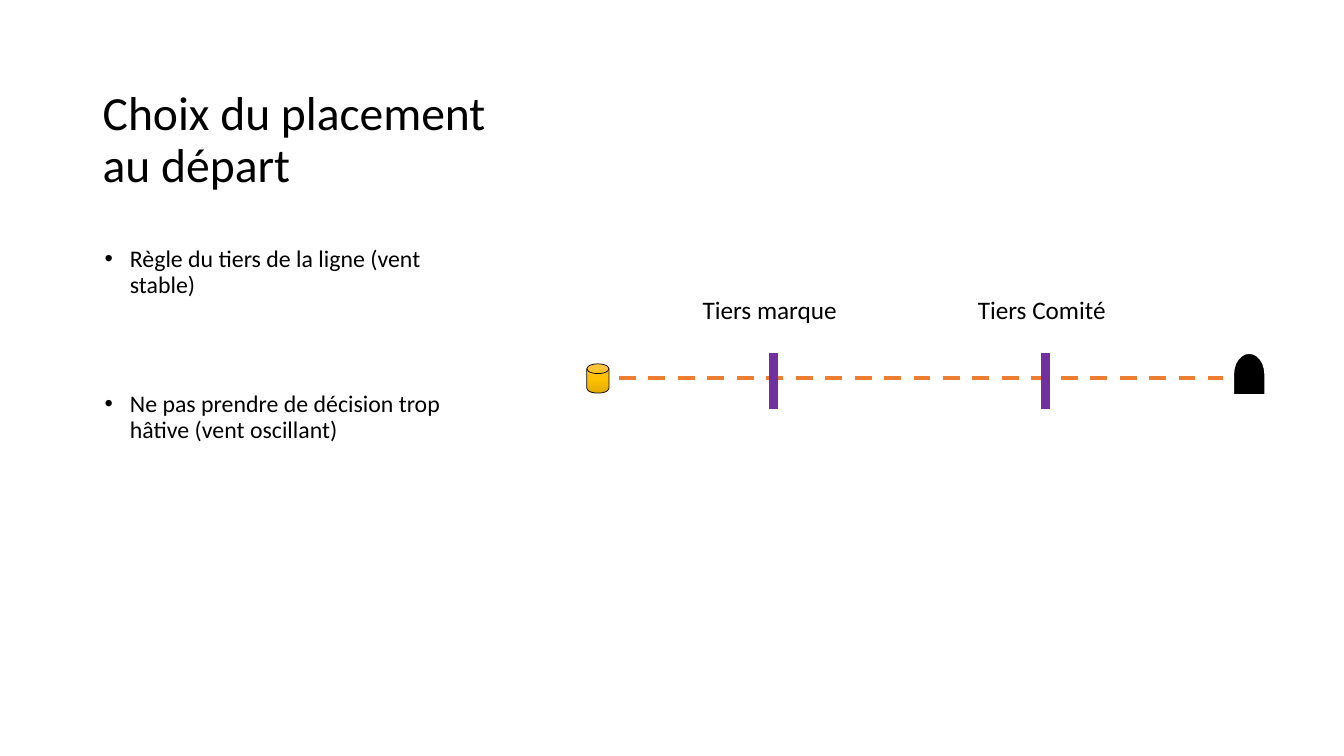
import copy

import pptx
import pptx.dml.color
import pptx.enum.dml
import pptx.enum.shapes
import pptx.enum.text
import pptx.oxml
import pptx.oxml.ns
import pptx.util
from pptx.util import Inches

RGBColor = pptx.dml.color.RGBColor
BLACK = RGBColor(0x00, 0x00, 0x00)
WHITE = RGBColor(0xFF, 0xFF, 0xFF)
ORANGE = RGBColor(0xED, 0x7D, 0x31)
PURPLE = RGBColor(0x70, 0x30, 0xA0)
BUOY_STOPS = [
    (0, RGBColor(0xFF, 0xC6, 0x4B)),
    (0.5, RGBColor(0xFF, 0xC0, 0x00)),
    (1, RGBColor(0xE3, 0xAB, 0x00)),
]

LINE_Y = 3.75
THIRDS = [("Tiers marque", 7.67, 6.87), ("Tiers Comité", 10.37, 9.6)]


def add_bullet(para):
    properties = para._p.get_or_add_pPr()
    properties.set("marL", str(Inches(0.25)))
    properties.set("indent", str(Inches(-0.25)))
    font = pptx.oxml.ns.qn("a:buFont")
    properties.append(properties.makeelement(font, {"typeface": "Arial"}))
    char = pptx.oxml.ns.qn("a:buChar")
    properties.append(properties.makeelement(char, {"char": "•"}))


def add_text(slide, paragraphs, left, top, width, height, *, size,
             anchor=pptx.enum.text.MSO_ANCHOR.TOP, spacing=1.0,
             gap=0, bullets=False):
    """Add a text box; gap is the space in points between paragraphs."""
    box = slide.shapes.add_textbox(
        Inches(left), Inches(top), Inches(width), Inches(height))
    frame = box.text_frame
    frame.word_wrap = True
    frame.vertical_anchor = anchor
    for index, text in enumerate(paragraphs):
        para = frame.add_paragraph() if index else frame.paragraphs[0]
        para.line_spacing = spacing
        para.space_before = pptx.util.Pt(gap if index else 0)
        if bullets:
            add_bullet(para)
        span = para.add_run()
        span.text = text
        span.font.name = "Calibri"
        span.font.size = pptx.util.Pt(size)
        span.font.color.rgb = BLACK


def add_line(slide, start, end, color, width, dash=None):
    line = slide.shapes.add_connector(
        pptx.enum.shapes.MSO_CONNECTOR.STRAIGHT,
        *(Inches(value) for value in start + end))
    line.line.color.rgb = color
    line.line.width = pptx.util.Pt(width)
    if dash:
        line.line.dash_style = dash
    properties = line._element.spPr
    properties.append(
        properties.makeelement(pptx.oxml.ns.qn("a:effectLst"), {}))


def add_marker(slide, kind, left, top, width, height, outline, weight):
    marker = slide.shapes.add_shape(
        kind, Inches(left), Inches(top), Inches(width), Inches(height))
    marker.shadow.inherit = False
    marker.line.color.rgb = outline
    marker.line.width = pptx.util.Pt(weight)
    return marker


def fill_gradient(shape, stops):
    """Fill from top to bottom with (position, colour) stops."""
    shape.fill.gradient()
    shape.fill.gradient_angle = 270
    stop_list = next(shape._element.iter(pptx.oxml.ns.qn("a:gsLst")))
    while len(stop_list) < len(stops):
        stop_list.insert(1, copy.deepcopy(stop_list[0]))
    for stop, (position, color) in zip(shape.fill.gradient_stops, stops):
        stop.position = position
        stop.color.rgb = color


def add_start_line(slide):
    kinds = pptx.enum.shapes.MSO_SHAPE
    buoy = add_marker(slide, kinds.FLOWCHART_MAGNETIC_DISK,
                      5.82, 3.61, 0.22, 0.29, BLACK, 0.5)
    fill_gradient(buoy, BUOY_STOPS)

    committee_boat = add_marker(slide, kinds.FLOWCHART_DELAY,
                                12.18, 3.55, 0.42, 0.32, WHITE, 1.5)
    committee_boat.rotation = 270
    committee_boat.fill.solid()
    committee_boat.fill.fore_color.rgb = BLACK

    add_line(slide, (6.14, LINE_Y), (12.13, LINE_Y), ORANGE, 3,
             dash=pptx.enum.dml.MSO_LINE.DASH)
    for label, x, label_left in THIRDS:
        add_line(slide, (x, 3.5), (x, 4.06), PURPLE, 6)
        add_text(slide, [label], label_left, 2.87, 1.6, 0.4, size=18)


def main():
    deck = pptx.Presentation()
    deck.slide_width = Inches(13.33)
    deck.slide_height = Inches(7.5)
    page = deck.slides.add_slide(deck.slide_layouts[6])
    add_text(page, ["Choix du placement au départ"], 0.92, 0.67, 4.09, 1.46,
             size=34, anchor=pptx.enum.text.MSO_ANCHOR.MIDDLE, spacing=0.9)
    add_text(page,
             ["Règle du tiers de la ligne (vent stable)",
              "Ne pas prendre de décision trop hâtive (vent oscillant)"],
             0.94, 2.4, 3.75, 4.27, size=17, spacing=0.9, gap=67,
             bullets=True)
    add_start_line(page)
    deck.save("out.pptx")


if __name__ == "__main__":
    main()
